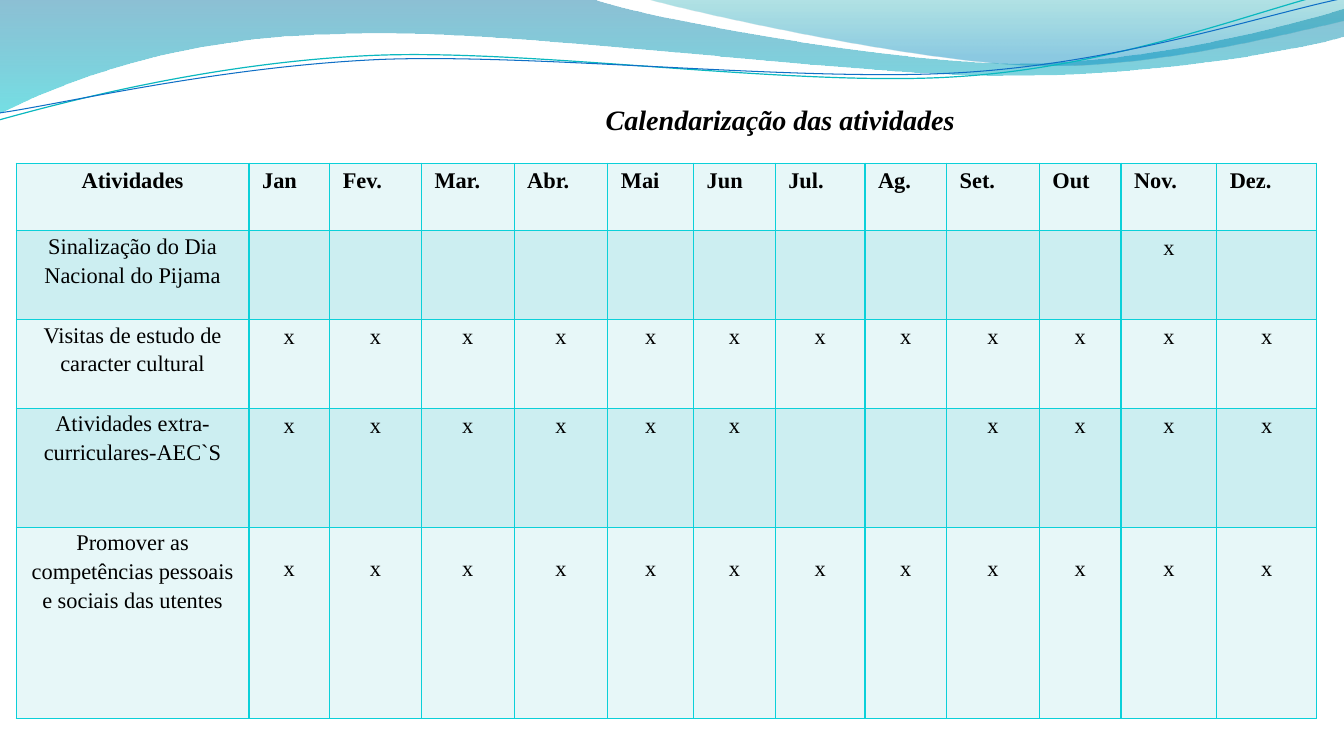
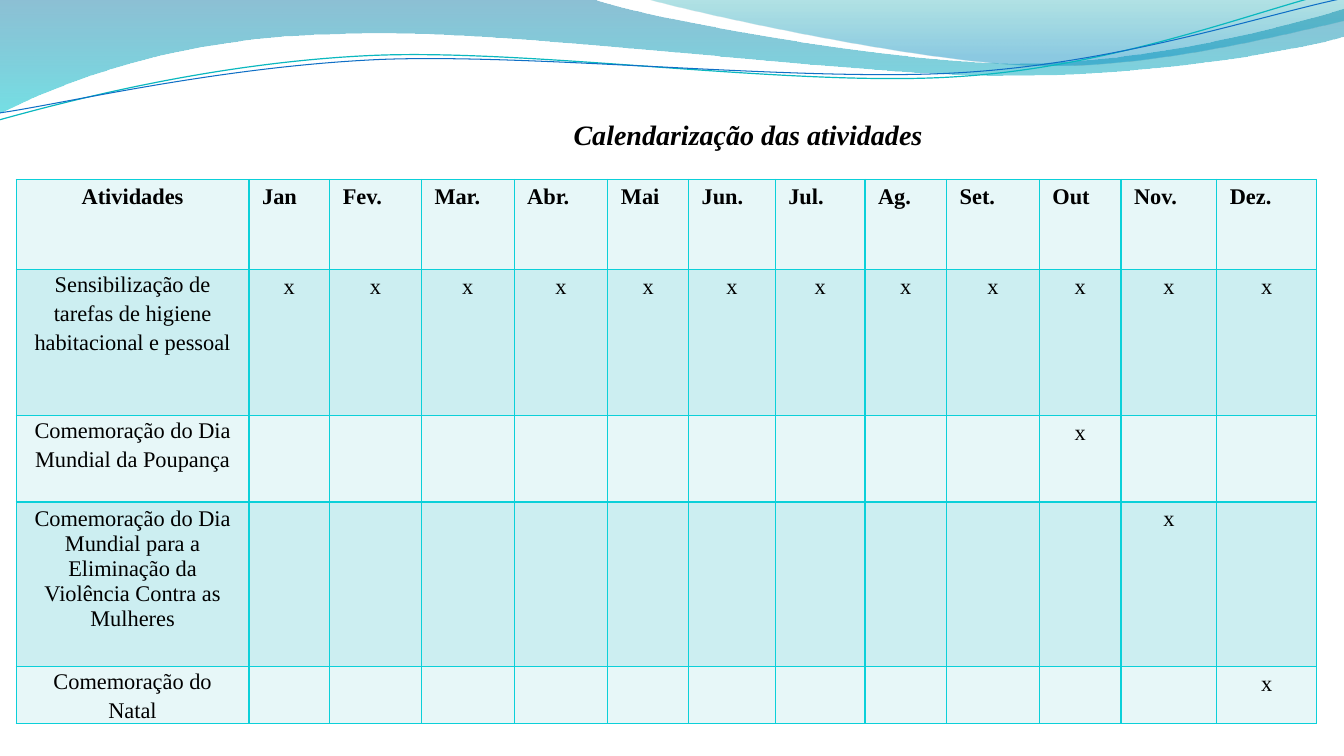
from dataclasses import dataclass

from pptx import Presentation
from pptx.dml.color import RGBColor
from pptx.enum.text import MSO_ANCHOR, MSO_AUTO_SIZE, PP_ALIGN
from pptx.oxml import parse_xml
from pptx.oxml.ns import nsdecls, qn
from pptx.util import Inches, Pt


@dataclass(frozen=True)
class Theme:
    font: str = "Times New Roman"
    text: str = "000000"
    border: str = "0BD0D9"
    row_fills: tuple = ("E7F7F8", "CCEEF1")
    title_size: int = 20
    table_size: int = 16
    border_width: int = 1
    line_spacing: float = 1.15
    space_after: int = 10
    side_margin: float = 0.13
    edge_margin: float = 0.05


THEME = Theme()
TITLE = "Calendarização das atividades"
TABLE_LEFT = 0.16
ALL_YEAR = range(1, 13)

# An activity is: name, months marked, row height, then optional settings.
CALENDARS = [
    {
        "title_box": (4.75, 0.92, 5.98, 0.49),
        "top": 1.62,
        "header_height": 0.67,
        "months": "Jan Fev. Mar. Abr. Mai Jun Jul. Ag. Set. Out Nov. Dez.",
        "columns": (2.31, 0.8, 0.91, 0.92, 0.93, 0.85, 0.81, 0.89, 0.81, 0.92, 0.81, 0.95, 0.99),
        "activities": [
            ("Sinalização do Dia Nacional do Pijama", [11], 0.88, {}),
            ("Visitas de estudo de caracter cultural", ALL_YEAR, 0.88, {}),
            ("Atividades extra-curriculares-AEC`S", [1, 2, 3, 4, 5, 6, 9, 10, 11, 12], 1.18, {}),
            ("Promover as competências pessoais e sociais das utentes", ALL_YEAR, 1.9,
             {"mark_top": 0.29}),
        ],
    },
    {
        "title_box": (4.22, 1.07, 6.4, 0.49),
        "top": 1.78,
        "header_height": 0.89,
        "months": "Jan Fev. Mar. Abr. Mai Jun. Jul. Ag. Set. Out Nov. Dez.",
        "columns": (2.31, 0.8, 0.91, 0.92, 0.93, 0.8, 0.86, 0.89, 0.81, 0.92, 0.81, 0.95, 0.99),
        "activities": [
            ("Sensibilização de tarefas de higiene habitacional e pessoal", ALL_YEAR, 1.45, {}),
            ("Comemoração do Dia Mundial da Poupança", [10], 0.86, {}),
            ("Comemoração do Dia Mundial para a Eliminação da Violência Contra as Mulheres",
             [11], 1.63, {"compact": True}),
            ("Comemoração do Natal", [12], 0.56, {}),
        ],
    },
]

# Outlines hold a start point, then lines (x, y) and curves (two controls and an end).
# Gradient stops are position, colour and opacity, in percent.
WAVES = [
    {
        "outline": [(0, 0), (5.87, -0.01), (6.34, 0.17, 8.85, 0.63, 10.11, 0.63),
                    (11.38, 0.63, 12.78, 0.26, 13.33, 0.09), (13.35, 0.36),
                    (13.11, 0.44, 11.6, 0.76, 9.94, 0.75), (8.29, 0.75, 5.09, 0.28, 3.43, 0.34),
                    (1.72, 0.36, 0.61, 0.83, -0.01, 1.13)],
        "gradient": [(0, "0074A1", 45), (100, "00C6CF", 55)],
    },
    {
        "outline": [(6.39, -0.01), (6.79, 0.11, 9.09, 0.62, 10.25, 0.65),
                    (11.41, 0.69, 12.82, 0.32, 13.33, 0.21), (13.33, 0)],
        "gradient": [(0, "00A1A9", 30), (80, "008BBF", 45)],
    },
    {
        "outline": [(-0.01, 1.19), (0.64, 1.01, 2.11, 0.62, 3.69, 0.55),
                    (5.27, 0.48, 7.9, 0.87, 9.5, 0.76), (11.1, 0.66, 12.52, 0.08, 13.31, -0.1)],
        "line": ("0AB8BF", 0.85),
    },
    {
        "outline": [(0, 1.12), (0.63, 1.03, 2.18, 0.66, 3.78, 0.59),
                    (5.37, 0.53, 7.96, 0.82, 9.55, 0.72), (11.15, 0.62, 12.55, 0.14, 13.34, -0.02)],
        "line": ("0F6FC6", 0.75),
    },
]


def color(value):
    return RGBColor.from_string(value)


def add_curved_shape(shapes, outline, closed):
    """Build a freeform through every point, then join each curve's points into a Bézier."""
    points = [(Inches(segment[i]), Inches(segment[i + 1]))
              for segment in outline for i in range(0, len(segment), 2)]
    builder = shapes.build_freeform(*points[0])
    builder.add_line_segments(points[1:], close=closed)
    shape = builder.convert_to_shape()
    steps = iter(list(shape.element.iter(qn("a:lnTo"))))
    for segment in outline[1:]:
        first = next(steps)
        if len(segment) == 6:
            curve = parse_xml(f"<a:cubicBezTo {nsdecls('a')}/>")
            first.addprevious(curve)
            for step in (first, next(steps), next(steps)):
                curve.append(step[0])
                step.getparent().remove(step)
    return shape


def gradient_fill(stops):
    stop_xml = "".join(
        f'<a:gs pos="{position * 1000}"><a:srgbClr val="{value}">'
        f'<a:alpha val="{opacity * 1000}"/></a:srgbClr></a:gs>'
        for position, value, opacity in stops)
    return parse_xml(f'<a:gradFill {nsdecls("a")} rotWithShape="1"><a:gsLst>{stop_xml}</a:gsLst>'
                     '<a:lin ang="5400000" scaled="0"/></a:gradFill>')


def add_waves_to_master(slide, master):
    """Draw the waves on a slide, where freeforms can be built, and move them to the master."""
    for index, wave in enumerate(WAVES):
        shape = add_curved_shape(slide.shapes, wave["outline"], "gradient" in wave)
        shape.name = f"Wave {index + 1}"
        shape.shadow.inherit = False
        if "gradient" in wave:
            shape.line.fill.background()
            shape.element.spPr.find(qn("a:custGeom")).addnext(gradient_fill(wave["gradient"]))
        else:
            line_color, width = wave["line"]
            shape.fill.background()
            shape.line.color.rgb = color(line_color)
            shape.line.width = Pt(width)
        shape.element.nvSpPr.cNvPr.set("id", str(100 + index))
        master.shapes.element.insert(2 + index, shape.element)


def format_font(paragraph, size, bold=False, italic=False):
    for run in paragraph.runs:
        font = run.font
        font.name = THEME.font
        font.size = Pt(size)
        font.bold = bold
        font.italic = italic
        font.color.rgb = color(THEME.text)


def add_title(slide, box):
    title = slide.shapes.title
    title.left, title.top, title.width, title.height = map(Inches, box)
    frame = title.text_frame
    frame.text = TITLE
    frame.auto_size = MSO_AUTO_SIZE.NONE
    frame.word_wrap = True
    frame.vertical_anchor = MSO_ANCHOR.TOP
    paragraph = frame.paragraphs[0]
    paragraph.alignment = PP_ALIGN.CENTER
    paragraph.line_spacing = THEME.line_spacing
    format_font(paragraph, THEME.title_size, bold=True, italic=True)


def style_cell(cell, fill):
    properties = cell._tc.get_or_add_tcPr()
    for side in ("lnL", "lnR", "lnT", "lnB"):
        properties.append(parse_xml(
            f'<a:{side} {nsdecls("a")} w="{Pt(THEME.border_width)}"><a:solidFill>'
            f'<a:srgbClr val="{THEME.border}"/></a:solidFill></a:{side}>'))
    cell.fill.solid()
    cell.fill.fore_color.rgb = color(fill)
    cell.margin_left = cell.margin_right = Inches(THEME.side_margin)
    cell.margin_top = cell.margin_bottom = Inches(THEME.edge_margin)


def write_cell(cell, text, bold=False, alignment=PP_ALIGN.CENTER):
    cell.text_frame.text = text
    paragraph = cell.text_frame.paragraphs[0]
    paragraph.alignment = alignment
    format_font(paragraph, THEME.table_size, bold)
    return paragraph


def write_activity(cell, name, compact):
    paragraph = write_cell(cell, name)
    if not compact:
        cell.margin_top = cell.margin_bottom = 0
        paragraph.line_spacing = THEME.line_spacing
        paragraph.space_after = Pt(THEME.space_after)


def add_calendar(slide, calendar):
    activities, columns = calendar["activities"], calendar["columns"]
    heights = [calendar["header_height"]] + [height for _, _, height, _ in activities]
    table = slide.shapes.add_table(
        len(heights), len(columns), Inches(TABLE_LEFT), Inches(calendar["top"]),
        Inches(sum(columns)), Inches(sum(heights))).table
    table.horz_banding = False
    for column, width in zip(table.columns, columns):
        column.width = Inches(width)
    for index, (row, height) in enumerate(zip(table.rows, heights)):
        row.height = Inches(height)
        for cell in row.cells:
            style_cell(cell, THEME.row_fills[index % 2])

    write_cell(table.cell(0, 0), "Atividades", bold=True)
    for column, month in enumerate(calendar["months"].split(), start=1):
        write_cell(table.cell(0, column), month, bold=True, alignment=PP_ALIGN.LEFT)
    for row, (name, months, _, settings) in enumerate(activities, start=1):
        write_activity(table.cell(row, 0), name, settings.get("compact", False))
        for month in months:
            cell = table.cell(row, month)
            write_cell(cell, "x")
            cell.margin_top = Inches(settings.get("mark_top", THEME.edge_margin))


def main():
    presentation = Presentation()
    presentation.slide_width = Inches(13.33)
    presentation.slide_height = Inches(7.5)
    title_only = presentation.slide_layouts[5]
    slides = [presentation.slides.add_slide(title_only) for _ in CALENDARS]
    add_waves_to_master(slides[0], presentation.slide_master)
    for slide, calendar in zip(slides, CALENDARS):
        add_title(slide, calendar["title_box"])
        add_calendar(slide, calendar)
    presentation.save("out.pptx")


if __name__ == "__main__":
    main()
